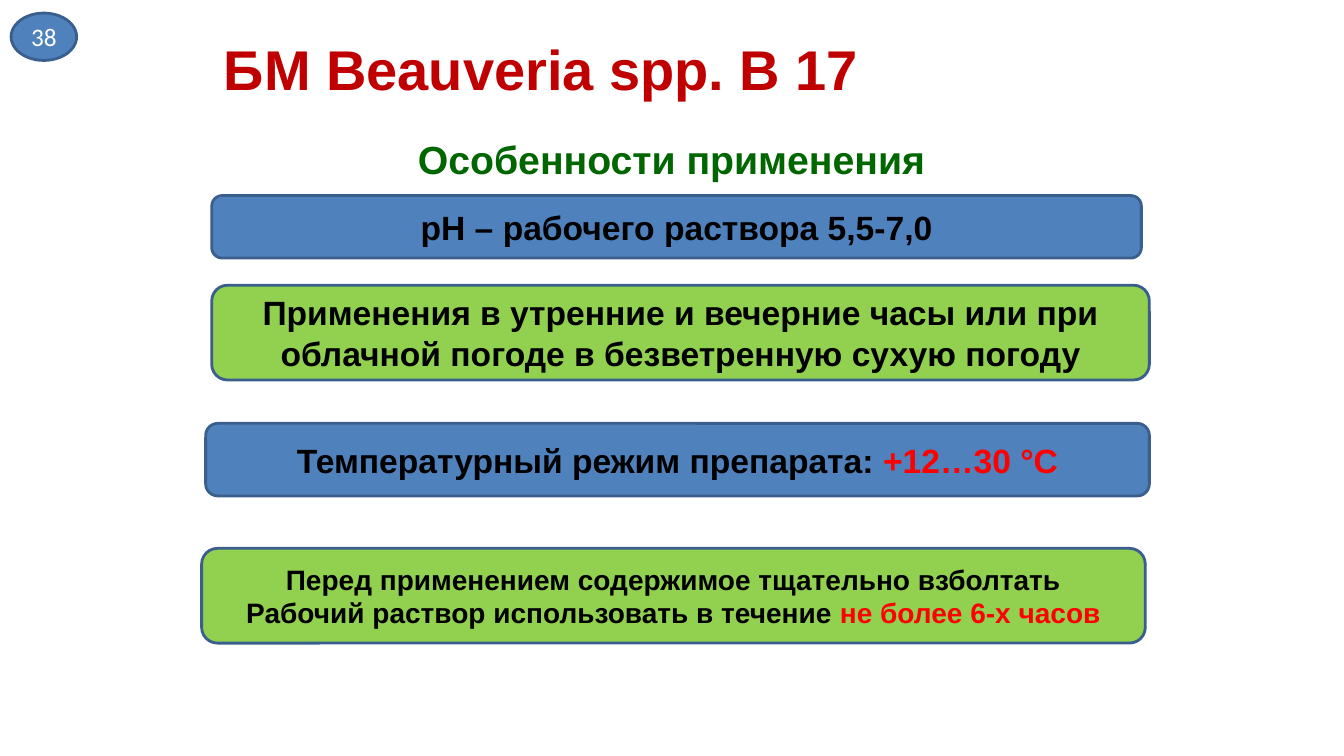
from dataclasses import dataclass

from pptx import Presentation
from pptx.dml.color import RGBColor
from pptx.enum.shapes import MSO_SHAPE
from pptx.enum.text import MSO_ANCHOR, PP_ALIGN
from pptx.util import Inches, Pt

ROUNDED = MSO_SHAPE.ROUNDED_RECTANGLE
OVAL = MSO_SHAPE.OVAL
CENTER = PP_ALIGN.CENTER
MIDDLE = MSO_ANCHOR.MIDDLE
TOP = MSO_ANCHOR.TOP


@dataclass(frozen=True)
class Theme:
    blue: str = "4F81BD"
    green: str = "92D050"
    outline: str = "3A5F8C"
    title: str = "C00000"
    heading: str = "006600"
    text: str = "000000"
    accent: str = "FF0000"
    badge_text: str = "FFFFFF"
    font: str = "Arial"
    badge_font: str = "Calibri"
    title_size: int = 40
    heading_size: int = 28
    body_size: int = 24
    note_size: int = 20
    badge_size: int = 18
    line_width: int = 2


class SlideBuilder:
    def __init__(self, prs, theme):
        self.theme = theme
        self.slide = prs.slides.add_slide(prs.slide_layouts[6])

    def fill_text(self, tf, lines, anchor, size, color, font=None, bold=True, spacing=None):
        """Each line is a list of (text, color) runs; color None means the default."""
        tf.word_wrap = True
        tf.vertical_anchor = anchor
        style = {"name": font or self.theme.font, "size": Pt(size), "bold": bold}
        for i, line in enumerate(lines):
            p = tf.add_paragraph() if i else tf.paragraphs[0]
            p.alignment = CENTER
            p.line_spacing = spacing
            for text, run_color in line:
                r = p.add_run()
                r.text = text
                for key, value in style.items():
                    setattr(r.font, key, value)
                r.font.color.rgb = RGBColor.from_string(run_color or color)

    def label(self, box, text, size, color, spacing=None):
        s = self.slide.shapes.add_textbox(*map(Inches, box))
        self.fill_text(s.text_frame, [[(text, None)]], TOP, size, color, spacing=spacing)

    def panel(self, kind, box, fill, lines, size, color, **style):
        s = self.slide.shapes.add_shape(kind, *map(Inches, box))
        s.shadow.inherit = False
        s.fill.solid()
        s.fill.fore_color.rgb = RGBColor.from_string(fill)
        s.line.color.rgb = RGBColor.from_string(self.theme.outline)
        s.line.width = Pt(self.theme.line_width)
        self.fill_text(s.text_frame, lines, MIDDLE, size, color, **style)


def main():
    prs = Presentation()
    prs.slide_width, prs.slide_height = Inches(13.33), Inches(7.5)
    t = Theme()
    slide = SlideBuilder(prs, t)

    # Title and heading
    slide.label((2.02, 0.29, 6.69, 0.77), "БМ Beauveria spp. B 17", t.title_size, t.title)
    slide.label((1.78, 1.35, 9.76, 0.55), "Особенности применения",
                t.heading_size, t.heading, spacing=0.9)

    # Application rules
    rules = [
        ((2.1, 1.94, 9.22, 0.62), t.blue, t.body_size,
         [[("pH – рабочего раствора 5,5-7,0", None)]]),
        ((2.1, 2.83, 9.3, 0.94), t.green, t.body_size,
         [[("Применения в утренние и вечерние часы или при "
            "облачной погоде в безветренную сухую погоду", None)]]),
        ((2.04, 4.2, 9.36, 0.72), t.blue, t.body_size,
         [[("Температурный режим препарата: ", None), ("+12…30 °С", t.accent)]]),
        ((2, 5.44, 9.36, 0.94), t.green, t.note_size,
         [[("Перед применением содержимое тщательно взболтать", None)],
          [("Рабочий раствор использовать в течение ", None),
           ("не более 6-х часов", t.accent)]]),
    ]
    for box, fill, size, lines in rules:
        slide.panel(ROUNDED, box, fill, lines, size, t.text)

    # Slide number badge
    slide.panel(OVAL, (0.11, 0.13, 0.65, 0.47), t.blue, [[("38", None)]],
                t.badge_size, t.badge_text, font=t.badge_font, bold=False)

    prs.save("out.pptx")


if __name__ == "__main__":
    main()
